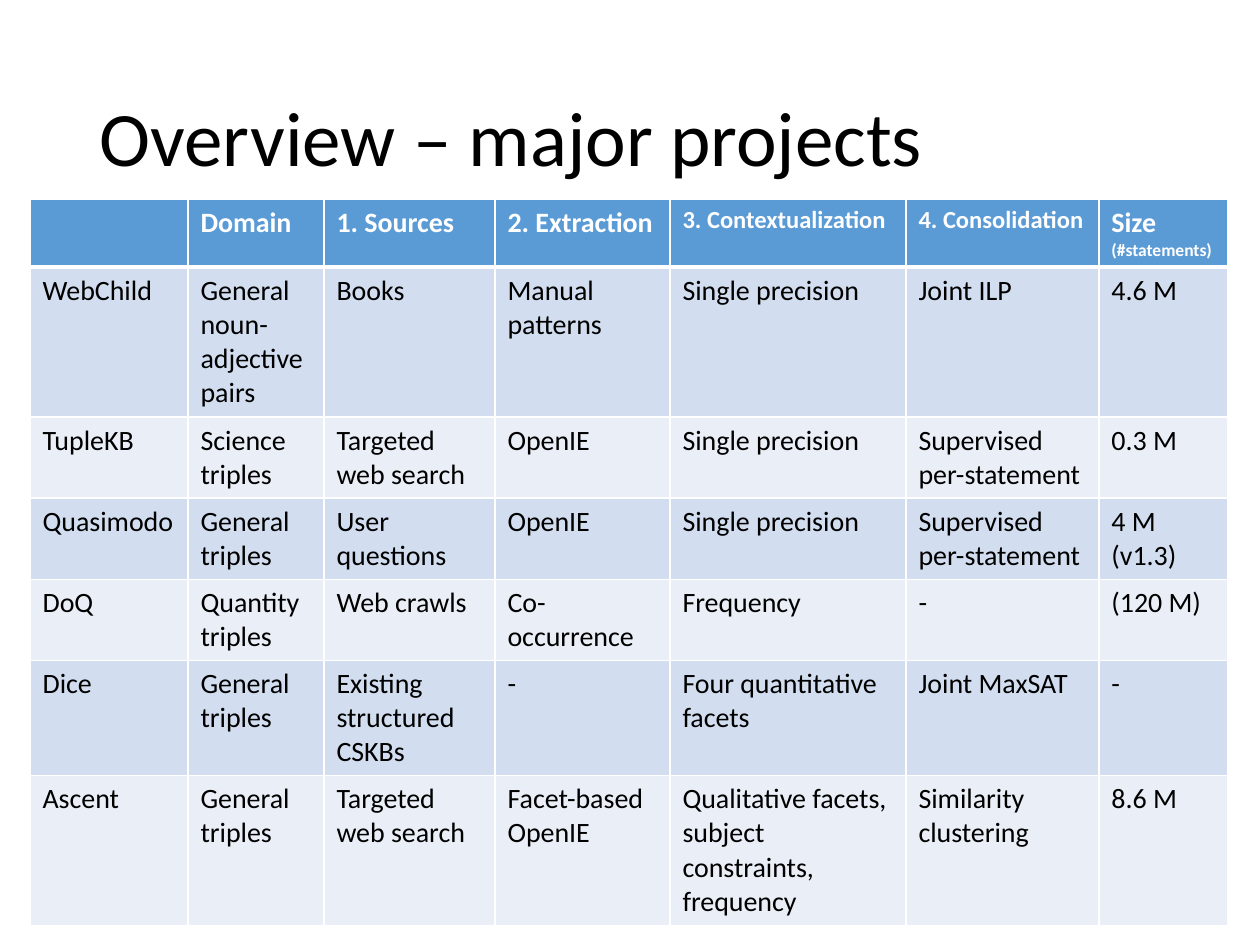
from dataclasses import dataclass

from lxml import etree
from pptx import Presentation
from pptx.dml.color import RGBColor
from pptx.enum.text import MSO_ANCHOR, MSO_AUTO_SIZE, PP_ALIGN
from pptx.oxml.ns import qn
from pptx.util import Emu, Pt

LEFT = PP_ALIGN.LEFT
MIDDLE = MSO_ANCHOR.MIDDLE
NO_FIT = MSO_AUTO_SIZE.NONE

PX_PER_INCH = 126
FONT = "Calibri"
BLACK = RGBColor(0x00, 0x00, 0x00)
WHITE = RGBColor(0xFF, 0xFF, 0xFF)
HEADER_BLUE = RGBColor(0x5B, 0x9B, 0xD5)
BAND_DARK = RGBColor(0xD2, 0xDE, 0xEF)
BAND_LIGHT = RGBColor(0xEA, 0xEF, 0xF7)

THIN, THICK = 1, 3  # border widths in points


@dataclass(frozen=True)
class Column:
    width: int
    heading: str
    size: int = 16
    note: str = ""


@dataclass(frozen=True)
class Project:
    height: int
    values: tuple[str, ...]


@dataclass(frozen=True)
class CellStyle:
    fill: RGBColor
    color: RGBColor
    bold: bool
    top: int
    bottom: int


COLUMNS = (
    Column(158, ""),
    Column(136, "Domain"),
    Column(171, "1. Sources"),
    Column(175, "2. Extraction"),
    Column(236, "3. Contextualization", 14),
    Column(193, "4. Consolidation", 14),
    Column(129, "Size", note="(#statements)"),
)
HEADER_HEIGHT = 68
PROJECTS = (
    Project(150, ("WebChild", "General noun-adjective pairs", "Books", "Manual patterns",
                  "Single precision", "Joint ILP", "4.6 M")),
    Project(81, ("TupleKB", "Science triples", "Targeted web search", "OpenIE",
                 "Single precision", "Supervised per-statement", "0.3 M")),
    Project(81, ("Quasimodo", "General triples", "User questions", "OpenIE",
                 "Single precision", "Supervised per-statement", "4 M (v1.3)")),
    Project(81, ("DoQ", "Quantity triples", "Web crawls", "Co-occurrence",
                 "Frequency", "-", "(120 M)")),
    Project(115, ("Dice", "General triples", "Existing structured CSKBs", "-",
                  "Four quantitative facets", "Joint MaxSAT", "-")),
    Project(149, ("Ascent", "General triples", "Targeted web search", "Facet-based OpenIE",
                  "Qualitative facets, subject constraints, frequency",
                  "Similarity clustering", "8.6 M")),
)


def px(length: int) -> Emu:
    return Emu(round(length * 914400 / PX_PER_INCH))


def add_span(para, text: str, size: int, color: RGBColor, bold: bool = False) -> None:
    span = para.add_run()
    span.text = text
    span.font.name = FONT
    span.font.size = Pt(size)
    span.font.bold = bold
    span.font.color.rgb = color


def add_border(cell, side: str, width: int) -> None:
    properties = cell._tc.get_or_add_tcPr()
    line = etree.SubElement(properties, qn(f"a:ln{side}"), w=str(Pt(width)))
    fill = etree.SubElement(line, qn("a:solidFill"))
    etree.SubElement(fill, qn("a:srgbClr"), val=str(WHITE))


def style_cell(cell, style: CellStyle) -> None:
    # Borders come before the fill in the cell properties
    for side, width in (("L", THIN), ("R", THIN), ("T", style.top), ("B", style.bottom)):
        add_border(cell, side, width)
    cell.fill.solid()
    cell.fill.fore_color.rgb = style.fill


def add_title(page, text: str) -> None:
    title = page.shapes.title
    title.left, title.top, title.width, title.height = px(87), px(50), px(1086), px(183)
    frame = title.text_frame
    frame.auto_size = NO_FIT
    frame.word_wrap = True
    frame.vertical_anchor = MIDDLE
    para = frame.paragraphs[0]
    para.alignment = LEFT
    para.line_spacing = 0.9
    add_span(para, text, 44, BLACK)


def add_project_table(page) -> None:
    heights = [HEADER_HEIGHT] + [project.height for project in PROJECTS]
    width = sum(column.width for column in COLUMNS)
    table = page.shapes.add_table(len(heights), len(COLUMNS), px(30), px(199),
                                  px(width), px(sum(heights))).table
    for row, height in zip(table.rows, heights):
        row.height = px(height)

    # Header row
    header = CellStyle(HEADER_BLUE, WHITE, True, THIN, THICK)
    for index, column in enumerate(COLUMNS):
        table.columns[index].width = px(column.width)
        cell = table.cell(0, index)
        style_cell(cell, header)
        if column.heading:
            add_span(cell.text_frame.paragraphs[0], column.heading, column.size,
                     header.color, header.bold)
        if column.note:
            add_span(cell.text_frame.add_paragraph(), column.note, 10,
                     header.color, header.bold)

    # Banded project rows
    for number, project in enumerate(PROJECTS, start=1):
        band = BAND_DARK if number % 2 else BAND_LIGHT
        body = CellStyle(band, BLACK, False, THICK if number == 1 else THIN, THIN)
        for index, value in enumerate(project.values):
            cell = table.cell(number, index)
            style_cell(cell, body)
            add_span(cell.text_frame.paragraphs[0], value, 16, body.color, body.bold)


def main() -> None:
    deck = Presentation()
    deck.slide_width, deck.slide_height = px(1260), px(945)
    page = deck.slides.add_slide(deck.slide_layouts[5])
    add_title(page, "Overview – major projects")
    add_project_table(page)
    deck.save("out.pptx")


if __name__ == "__main__":
    main()
